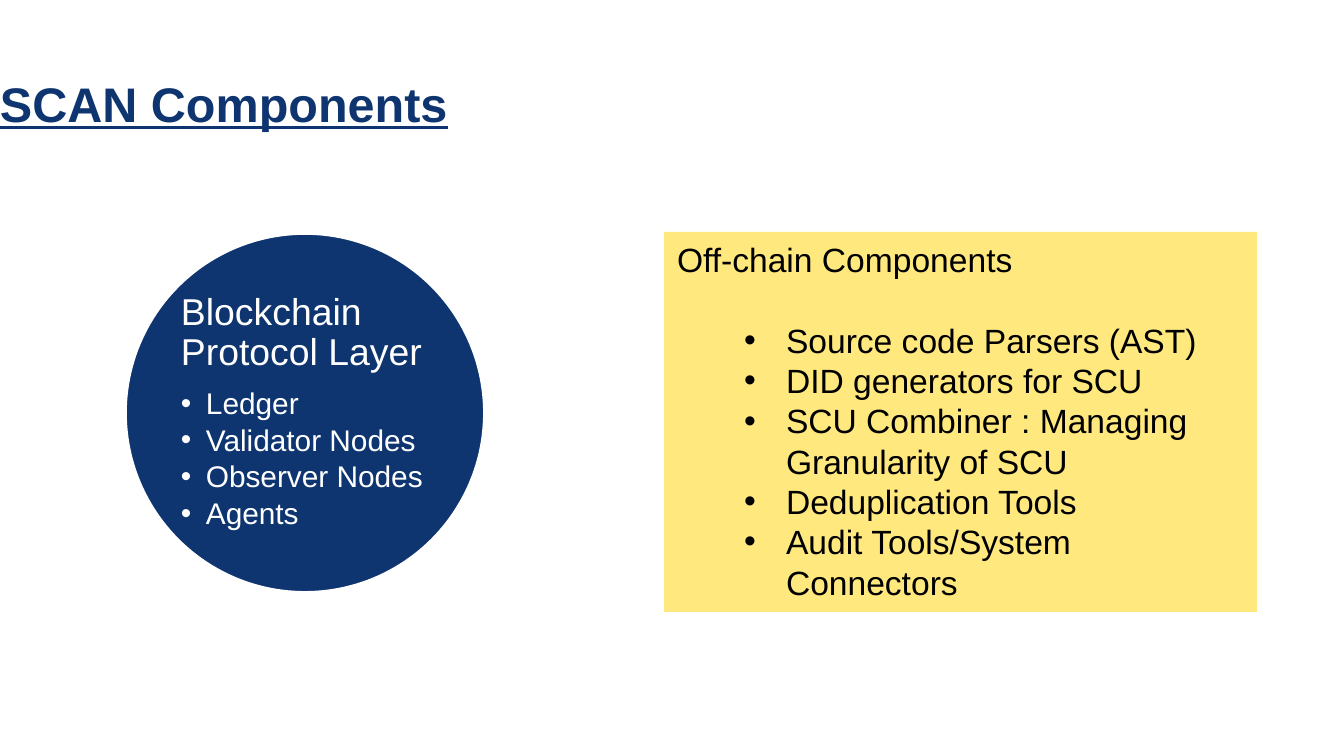
from lxml import etree
from pptx import Presentation
from pptx import util as u
from pptx.dml.color import RGBColor
from pptx.enum import shapes, text
from pptx.oxml.ns import qn

NAVY = RGBColor(0x0E, 0x35, 0x70)
YELLOW = RGBColor(0xFF, 0xE9, 0x7F)
WHITE = RGBColor(0xFF, 0xFF, 0xFF)
BLACK = RGBColor(0, 0, 0)
FONT = "Arial"

TITLE = "SCAN Components"
PROTOCOL_HEADING = "Blockchain Protocol Layer"
PROTOCOL_ITEMS = ["Ledger", "Validator Nodes", "Observer Nodes", "Agents"]
OFFCHAIN_HEADING = "Off-chain Components"
OFFCHAIN_ITEMS = [
    "Source code Parsers (AST)",
    "DID generators for SCU",
    "SCU Combiner : Managing Granularity of SCU",
    "Deduplication Tools",
    "Audit Tools/System Connectors",
]

TITLE_BOX = (0, 38, 470, 134)
CIRCLE = (125, 233, 360, 360)
CIRCLE_TEXT = (177, 285, 254, 254)
OFFCHAIN_BOX = (664, 232, 593, 380)


def px(n):
    return u.Emu(round(n * 914400 / 134.4))


def setup_text(sp, anchor, margins):
    tf = sp.text_frame
    tf.word_wrap = True
    tf.vertical_anchor = anchor
    tf.margin_left, tf.margin_top, tf.margin_right, tf.margin_bottom = map(px, margins)
    return tf


def add_text_box(slide, box, margins):
    sp = slide.shapes.add_textbox(*map(px, box))
    return setup_text(sp, text.MSO_ANCHOR.MIDDLE, margins)


def add_shape(slide, kind, box, fill):
    sp = slide.shapes.add_shape(kind, *map(px, box))
    sp.shadow.inherit = False
    sp.fill.solid()
    sp.fill.fore_color.rgb = fill
    sp.line.fill.background()
    return sp


def write(p, content, size, color, spacing=1.0, after=0):
    p.text = content
    p.alignment = text.PP_ALIGN.LEFT
    p.line_spacing = spacing
    p.space_after = u.Pt(after)
    for r in p.runs:
        r.font.name = FONT
        r.font.size = u.Pt(size)
        r.font.color.rgb = color


def add_bullets(tf, items, indent, hang, **style):
    for item in items:
        p = tf.add_paragraph()
        write(p, item, **style)
        p.level = 1
        pPr = p._p.get_or_add_pPr()
        pPr.set("marL", str(px(indent)))
        pPr.set("indent", str(-px(hang)))
        etree.SubElement(pPr, qn("a:buFont"), typeface=FONT)
        etree.SubElement(pPr, qn("a:buChar"), char="•")


prs = Presentation()
prs.slide_width, prs.slide_height = px(1344), px(756)
s = prs.slides.add_slide(prs.slide_layouts[6])

tf = add_text_box(s, TITLE_BOX, (0, 7, 13, 7))
write(tf.paragraphs[0], TITLE, 26, NAVY, 0.98)
title_font = tf.paragraphs[0].runs[0].font
title_font.bold = title_font.underline = True

circle = add_shape(s, shapes.MSO_SHAPE.OVAL, CIRCLE, NAVY)
circle.line.color.rgb = WHITE
circle.line.width = u.Pt(2)

tf = add_text_box(s, CIRCLE_TEXT, (4, 4, 4, 4))
write(tf.paragraphs[0], PROTOCOL_HEADING, 20, WHITE, 0.9, 8)
add_bullets(tf, PROTOCOL_ITEMS, 25, 25, size=16, color=WHITE, spacing=0.9, after=2.4)

offchain = add_shape(s, shapes.MSO_SHAPE.RECTANGLE, OFFCHAIN_BOX, YELLOW)
tf = setup_text(offchain, text.MSO_ANCHOR.TOP, (13, 7, 13, 7))
write(tf.paragraphs[0], OFFCHAIN_HEADING, 18, BLACK, after=21.6)
add_bullets(tf, OFFCHAIN_ITEMS, 109, 42, size=18, color=BLACK)

prs.save("out.pptx")
